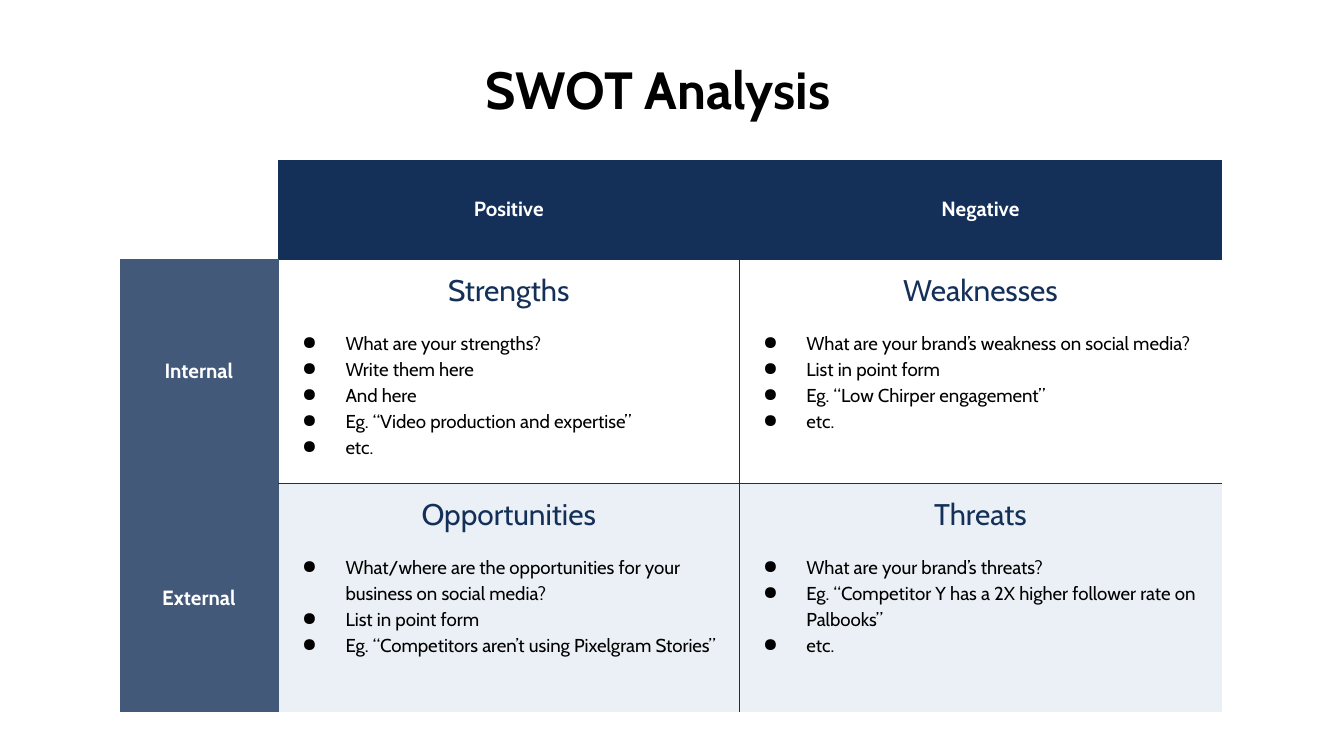
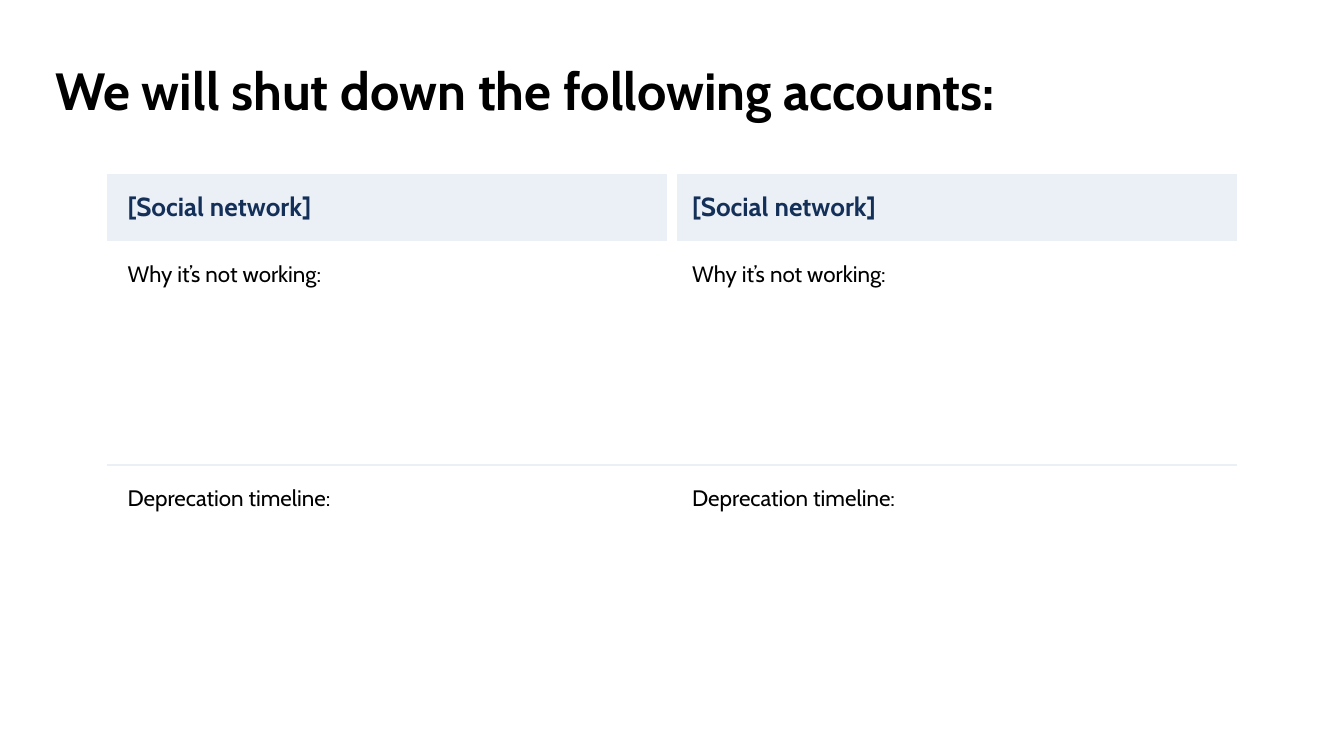
from dataclasses import dataclass

from lxml import etree
from pptx import Presentation
from pptx import util as u
from pptx.dml.color import RGBColor
from pptx.enum import text
from pptx.oxml import ns


@dataclass(frozen=True)
class Theme:
    """Colours, font and type sizes that the slides share."""
    font: str = "Cabin"
    navy: str = "143059"
    slate: str = "43597A"
    pale: str = "EAF0F5"
    white: str = "FFFFFF"
    black: str = "000000"
    title: int = 28
    quadrant: int = 16
    network: int = 14
    prompt: int = 12
    label: int = 11
    item: int = 10
    hairline: float = 0.75
    gutter: int = 6
    plain_table: str = "{2D5ABB26-0587-4C30-8999-92F81FD0307C}"


THEME = Theme()
CENTER = text.PP_ALIGN.CENTER
LEFT = text.PP_ALIGN.LEFT
TOP = text.MSO_ANCHOR.TOP
MIDDLE = text.MSO_ANCHOR.MIDDLE

SWOT_COLUMNS = ["Positive", "Negative"]
SWOT_ROWS = [
    ("Internal", THEME.white, [
        ("Strengths", ["What are your strengths?", "Write them here", "And here",
                       "Eg. “Video production and expertise”", "etc."]),
        ("Weaknesses", ["What are your brand’s weakness on social media?",
                        "List in point form", "Eg. “Low Chirper engagement”", "etc."]),
    ]),
    ("External", THEME.pale, [
        ("Opportunities", ["What/where are the opportunities for your business on social media?",
                           "List in point form",
                           "Eg. “Competitors aren’t using Pixelgram Stories”"]),
        ("Threats", ["What are your brand’s threats?",
                     "Eg. “Competitor Y has a 2X higher follower rate on Palbooks”", "etc."]),
    ]),
]
ACCOUNTS = ["[Social network]", "[Social network]"]
PROMPTS = ["Why it’s not working:", "Deprecation timeline:"]


def apply(target, values):
    """Set each named attribute of the target."""
    for name, value in values.items():
        setattr(target, name, value)


def margins(left, top, right, bottom):
    """Return the four inner margins, given in centimetres."""
    sides = zip(("left", "top", "right", "bottom"), (left, top, right, bottom))
    return {f"margin_{side}": u.Cm(size) for side, size in sides}


def write(para, words, size, color, bold=False, **layout):
    """Fill a paragraph with one formatted run."""
    apply(para, layout)
    span = para.add_run()
    span.text = words
    apply(span.font, {"name": THEME.font, "size": u.Pt(size), "bold": bold})
    span.font.color.rgb = RGBColor.from_string(color)


def add_bullet(para):
    """Give a paragraph a hanging round bullet."""
    props = para._p.get_or_add_pPr()
    props.set("marL", str(u.Cm(1.02)))
    props.set("indent", str(-u.Cm(0.82)))
    tint = etree.SubElement(props, ns.qn("a:buClr"))
    etree.SubElement(tint, ns.qn("a:srgbClr"), val=THEME.black)
    etree.SubElement(props, ns.qn("a:buChar"), char="●")


def paint(cell, fill=None, **borders):
    """Fill a cell and draw its borders, each a (colour, points) pair."""
    if fill:
        cell.fill.solid()
        cell.fill.fore_color.rgb = RGBColor.from_string(fill)
    props = cell._tc.get_or_add_tcPr()
    for place, side in enumerate(side for side in "LRTB" if side in borders):
        color, width = borders[side]
        line = etree.Element(ns.qn(f"a:ln{side}"), w=str(u.Pt(width)))
        solid = etree.SubElement(line, ns.qn("a:solidFill"))
        etree.SubElement(solid, ns.qn("a:srgbClr"), val=color)
        props.insert(place, line)


def add_title(page, box, words, align, inset):
    """Place and format the title placeholder."""
    title = page.shapes.title
    apply(title, dict(zip(("left", "top", "width", "height"), map(u.Cm, box))))
    frame = title.text_frame
    apply(frame, {"word_wrap": True, "auto_size": text.MSO_AUTO_SIZE.NONE,
                  "vertical_anchor": TOP, **margins(inset, 0.25, 0.25, 0.25)})
    write(frame.paragraphs[0], words, THEME.title, THEME.black, True,
          alignment=align, line_spacing=0.9)


def add_grid(page, left, top, widths, heights):
    """Add an unstyled table with the given column widths and row heights."""
    box = map(u.Cm, (left, top, sum(widths), sum(heights)))
    grid = page.shapes.add_table(len(heights), len(widths), *box).table
    apply(grid, {"first_row": False, "horz_banding": False})
    grid._tbl.tblPr.find(ns.qn("a:tableStyleId")).text = THEME.plain_table
    for column, width in zip(grid.columns, widths):
        column.width = u.Cm(width)
    for row, height in zip(grid.rows, heights):
        row.height = u.Cm(height)
    return grid


def fill_label(cell, words, fill, **borders):
    """Write a centred white row or column label."""
    apply(cell, {"vertical_anchor": MIDDLE, **margins(0.25, 0.25, 0.25, 0.25)})
    write(cell.text_frame.paragraphs[0], words, THEME.label, THEME.white, True, alignment=CENTER)
    paint(cell, fill, **borders)


def fill_quadrant(cell, heading, items, fill, **borders):
    """Write a quadrant heading and its bulleted items."""
    apply(cell, {"vertical_anchor": TOP, **margins(0.25, 0.25, 0.25, 0.25)})
    frame = cell.text_frame
    write(frame.paragraphs[0], heading, THEME.quadrant, THEME.navy,
          alignment=CENTER, space_after=u.Pt(11))
    for item in items:
        para = frame.add_paragraph()
        write(para, item, THEME.item, THEME.black, alignment=LEFT, line_spacing=1.15)
        add_bullet(para)
    paint(cell, fill, **borders)


def build_swot(page):
    """Build the SWOT slide."""
    grid = add_grid(page, 2.26, 3.02, (3, 8.71, 9.12), (1.88, 4.24, 4.32))
    navy, slate = (THEME.navy, THEME.hairline), (THEME.slate, THEME.hairline)
    paint(grid.cell(0, 0), R=navy)
    for column, words in enumerate(SWOT_COLUMNS, 1):
        fill_label(grid.cell(0, column), words, THEME.navy, L=navy, B=navy)
    for row, (label, fill, quadrants) in enumerate(SWOT_ROWS, 1):
        fill_label(grid.cell(row, 0), label, THEME.slate, R=slate)
        for column, (heading, items) in enumerate(quadrants, 1):
            borders = {"L": slate, "R": navy} if column == 1 else {"L": navy}
            if row == 1:
                borders["T"] = navy
            fill_quadrant(grid.cell(row, column), heading, items, fill, **borders)
    add_title(page, (1.04, 0.97, 22.78, 1.75), "SWOT Analysis", CENTER, 0.25)


def build_accounts(page):
    """Build the slide of accounts to shut down."""
    add_title(page, (0.89, 0.99, 21.21, 1.5),
              "We will shut down the following accounts:", LEFT, 0.15)
    grid = add_grid(page, 2.03, 3.28, (10.67, 10.67), (1.27, 4.24, 4.24))
    rule = (THEME.pale, THEME.hairline)
    for column, account in enumerate(ACCOUNTS):
        gutter = {"L" if column else "R": (THEME.white, THEME.gutter)}
        head = grid.cell(0, column)
        apply(head, {"vertical_anchor": MIDDLE, **margins(0.38, 0.25, 0.38, 0.25)})
        write(head.text_frame.paragraphs[0], account, THEME.network, THEME.navy, True)
        paint(head, THEME.pale, **gutter)
        for row, prompt in enumerate(PROMPTS, 1):
            cell = grid.cell(row, column)
            apply(cell, {"vertical_anchor": TOP, **margins(0.38, 0.38, 0.38, 0.25)})
            write(cell.text_frame.paragraphs[0], prompt, THEME.prompt, THEME.black)
            paint(cell, **gutter, **{"B" if row == 1 else "T": rule})


def main():
    """Build and save the deck."""
    deck = Presentation()
    apply(deck, {"slide_width": u.Cm(25.4), "slide_height": u.Cm(14.29)})
    title_only = deck.slide_layouts[5]
    for build in (build_swot, build_accounts):
        build(deck.slides.add_slide(title_only))
    deck.save("out.pptx")


if __name__ == "__main__":
    main()
